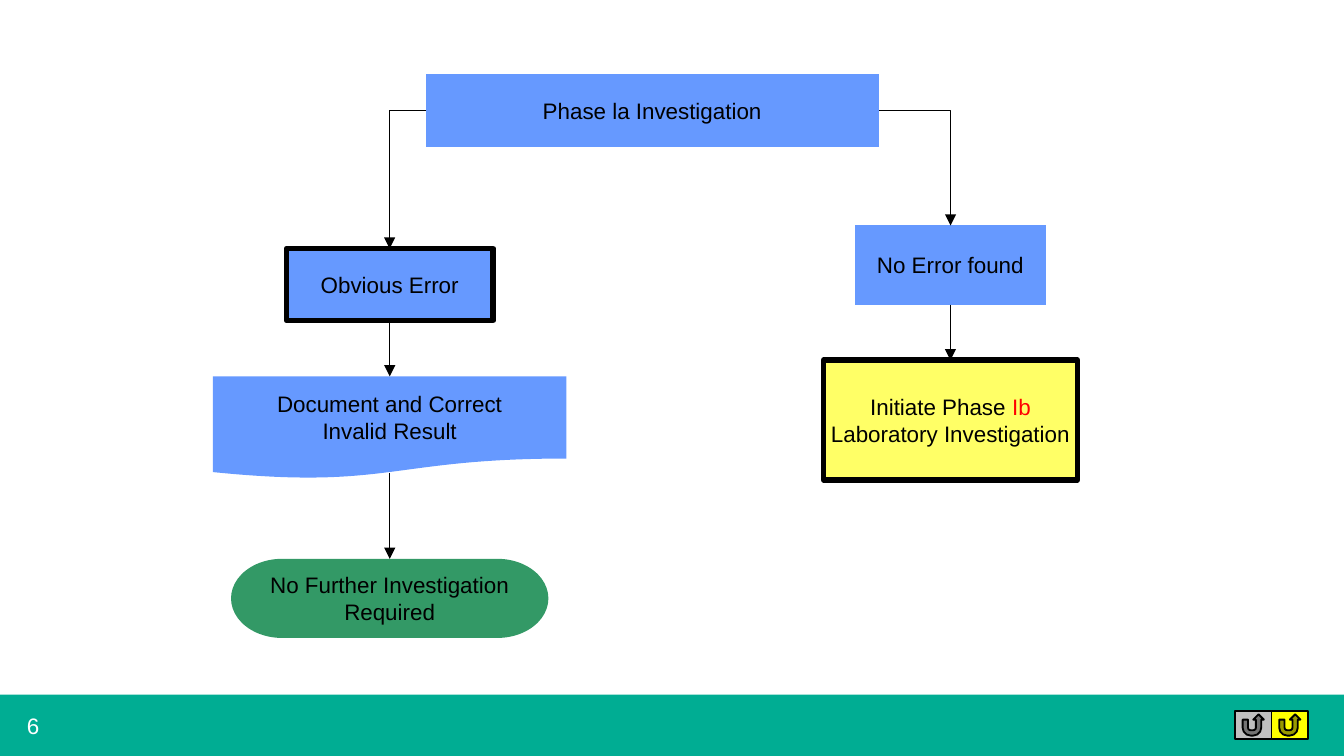
import pptx
import pptx.dml.color
import pptx.enum.shapes
import pptx.enum.text
import pptx.oxml.ns
import pptx.util
from lxml import etree

Pt = pptx.util.Pt
SHAPE = pptx.enum.shapes.MSO_SHAPE
CONNECTOR = pptx.enum.shapes.MSO_CONNECTOR
ALIGN = pptx.enum.text.PP_ALIGN
qn = pptx.oxml.ns.qn

THEME = {
    "font": "Arial", "size": 12,
    "ink": "000000", "accent": "FF0000", "paper": "FFFFFF",
    "step": "6699FF", "done": "339966", "next": "FFFF66", "band": "00AD93",
    "back": "C0C0C0", "return": "FFFF00",
    "frame": 3, "arrow": 0.75, "button": 1,
}
SLIDE_W, SLIDE_H = 720, 405
LEFT, MIDDLE, RIGHT = 208.8, 349.5, 509.2
TOP_SIDE, LEFT_SIDE, BOTTOM_SIDE, RIGHT_SIDE = range(4)

# name: (preset, centre x, top, width, height, fill, framed, lines of (text, colour) runs)
STEPS = {
    "investigation": (SHAPE.FLOWCHART_PROCESS, MIDDLE, 39.6, 242.6, 39, "step", False,
                      [[("Phase la Investigation", "ink")]]),
    "no error": (SHAPE.FLOWCHART_PROCESS, RIGHT, 120.8, 102, 42.4, "step", False,
                 [[("No Error found", "ink")]]),
    "initiate": (SHAPE.FLOWCHART_PROCESS, RIGHT, 193, 136, 64, "next", True,
                 [[("Initiate Phase ", "ink"), ("Ib", "accent")],
                  [("Laboratory Investigation", "ink")]]),
    "obvious error": (SHAPE.FLOWCHART_PROCESS, LEFT, 133.2, 110.8, 38.4, "step", True,
                      [[("Obvious Error", "ink")]]),
    "document": (SHAPE.FLOWCHART_DOCUMENT, LEFT, 201.6, 189.4, 55, "step", False,
                 [[("Document and Correct", "ink")], [("Invalid Result", "ink")]]),
    "finished": (SHAPE.FLOWCHART_TERMINATOR, LEFT, 299.4, 170, 42.4, "done", False,
                 [[("No Further Investigation", "ink")], [("Required", "ink")]]),
}
# from step, side it leaves, to step (always entered at the top)
ARROWS = [
    ("investigation", LEFT_SIDE, "obvious error"),
    ("investigation", RIGHT_SIDE, "no error"),
    ("obvious error", BOTTOM_SIDE, "document"),
    ("no error", BOTTOM_SIDE, "initiate"),
]
WAVE_Y = 253.4  # where the arrow leaves the document's curved lower edge
PAGE_NUMBER = "6"
BAND_TOP = 372.2
BUTTONS = ["back", "return"]
BUTTON_X, BUTTON_Y, BUTTON_W, BUTTON_H = 661.6, 380.8, 19.6, 15.2


def rgb(name):
    return pptx.dml.color.RGBColor.from_string(THEME[name])


def add_shape(slide, preset, x, y, w, h, fill, line_width=0):
    sp = slide.shapes.add_shape(preset, Pt(x), Pt(y), Pt(w), Pt(h))
    sp.shadow.inherit = False
    sp.fill.solid()
    sp.fill.fore_color.rgb = rgb(fill)
    if line_width:
        sp.line.color.rgb = rgb("ink")
        sp.line.width = Pt(line_width)
    else:
        sp.line.fill.background()
    return sp


def write(sp, lines, align):
    tf = sp.text_frame
    tf.vertical_anchor = pptx.enum.text.MSO_ANCHOR.MIDDLE
    tf.word_wrap = False
    for i, runs in enumerate(lines):
        p = tf.add_paragraph() if i else tf.paragraphs[0]
        p.alignment = align
        for text, colour in runs:
            r = p.add_run()
            r.text = text
            r.font.name = THEME["font"]
            r.font.size = Pt(THEME["size"])
            r.font.color.rgb = rgb(colour)


def add_step(slide, preset, cx, top, w, h, fill, framed, lines):
    width = THEME["frame"] if framed else 0
    sp = add_shape(slide, preset, cx - w / 2, top, w, h, fill, width)
    write(sp, lines, ALIGN.CENTER)
    return sp


def add_arrow(slide, kind, target, source=None, side=None, start=(0, 0)):
    """Point at the top of target, from a side of source or from a free start."""
    cn = slide.shapes.add_connector(kind, *start, *start)
    if source is not None:
        cn.begin_connect(source, side)
    cn.end_connect(target, TOP_SIDE)
    cn.line.color.rgb = rgb("ink")
    cn.line.width = Pt(THEME["arrow"])
    etree.SubElement(cn.line._get_or_add_ln(), qn("a:tailEnd"), type="triangle")
    spPr = cn._element.spPr
    etree.SubElement(spPr, qn("a:effectLst"))
    if kind == CONNECTOR.ELBOW:
        spPr.find(qn("a:prstGeom")).set("prst", "bentConnector2")


def add_footer(slide):
    band_h = SLIDE_H - BAND_TOP
    add_shape(slide, SHAPE.RECTANGLE, 0, BAND_TOP, SLIDE_W, band_h, "band")
    number = slide.shapes.add_textbox(0, Pt(BAND_TOP), Pt(42.4), Pt(band_h))
    write(number, [[(PAGE_NUMBER, "paper")]], ALIGN.LEFT)
    tf = number.text_frame
    tf.word_wrap = True
    tf.margin_left = Pt(14.4)
    tf.margin_right = tf.margin_top = tf.margin_bottom = 0
    for i, fill in enumerate(BUTTONS):
        add_shape(slide, SHAPE.ACTION_BUTTON_RETURN, BUTTON_X + i * BUTTON_W, BUTTON_Y,
                  BUTTON_W, BUTTON_H, fill, THEME["button"])


def main():
    prs = pptx.Presentation()
    prs.slide_width, prs.slide_height = Pt(SLIDE_W), Pt(SLIDE_H)
    slide = prs.slides.add_slide(prs.slide_layouts[6])
    add_footer(slide)
    steps = {name: add_step(slide, *step) for name, step in STEPS.items()}
    for source, side, target in ARROWS:
        kind = CONNECTOR.STRAIGHT if side == BOTTOM_SIDE else CONNECTOR.ELBOW
        add_arrow(slide, kind, steps[target], steps[source], side)
    add_arrow(slide, CONNECTOR.STRAIGHT, steps["finished"], start=(Pt(LEFT), Pt(WAVE_Y)))
    prs.save("out.pptx")


if __name__ == "__main__":
    main()
